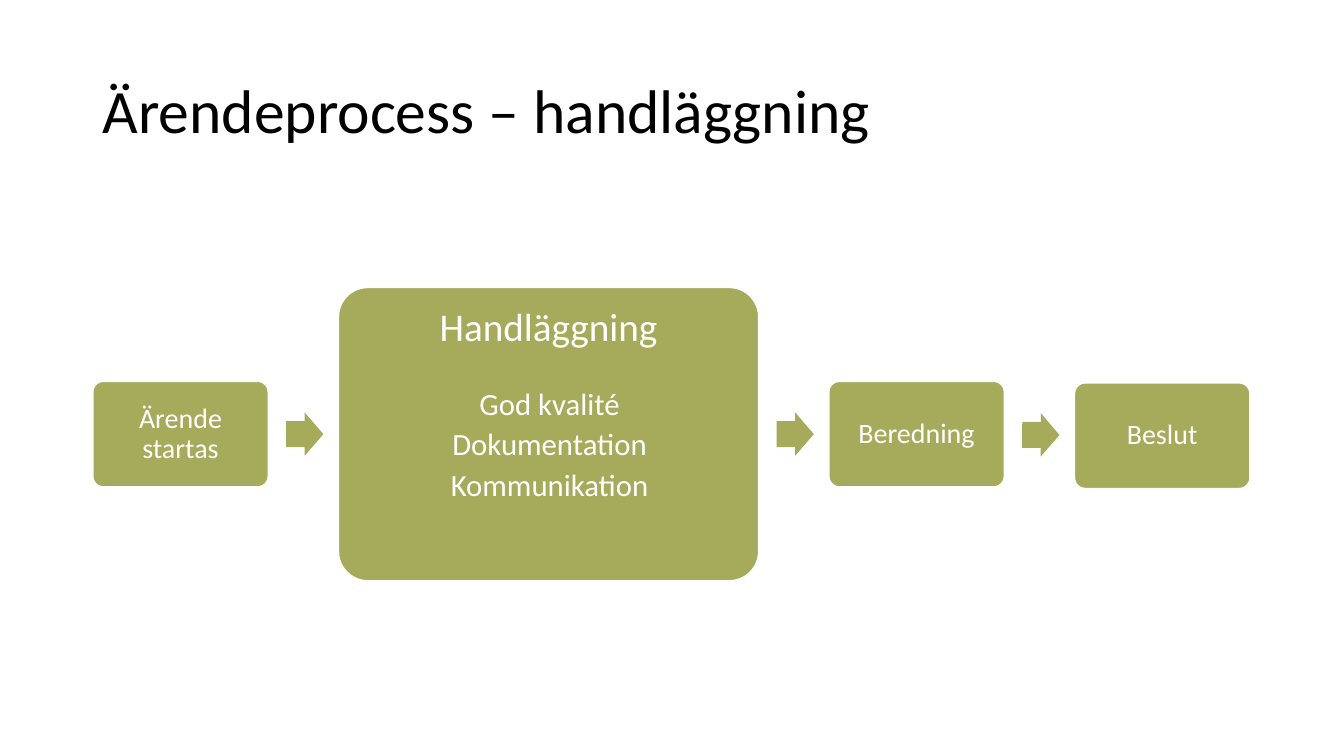
"""Build the slide on the case process, with handling as its main step."""
import dataclasses
import math

import pptx
import pptx.dml.color
import pptx.enum.shapes
import pptx.enum.text
import pptx.shapes.autoshape
import pptx.slide
import pptx.text.text
import pptx.util

Cm = pptx.util.Cm
Pt = pptx.util.Pt
Kind = pptx.enum.shapes.MSO_SHAPE
Align = pptx.enum.text.PP_ALIGN
Anchor = pptx.enum.text.MSO_ANCHOR

FONT = "Calibri"
GREEN = "A6AB5C"
WHITE = "FFFFFF"
BLACK = "000000"
GAP = 1.77
INSET = 0.45
HEAD_W, HEAD_H = 0.94, 1.09


@dataclasses.dataclass
class Step:
    """A box of the process, in centimetres and points."""
    text: str
    mid: float = 10.94
    width: float = 4.42
    height: float = 2.66
    size: int = 20
    pad: float = 0.2
    anchor: Anchor = Anchor.MIDDLE


STEPS = [
    Step("Ärende startas"),
    Step("Handläggning", width=10.59, height=7.39, size=28, pad=0.3,
         anchor=Anchor.TOP),
    Step("Beredning"),
    Step("Beslut", mid=10.98),
]
GOALS = ["God kvalité", "Dokumentation", "Kommunikation"]


def color(code: str) -> pptx.dml.color.RGBColor:
    """Turn a hex string into a colour."""
    return pptx.dml.color.RGBColor.from_string(code)


def write(frame: pptx.text.text.TextFrame, text: str, size: int, code: str,
          align: Align, anchor: Anchor, space: float) -> None:
    """Put one formatted paragraph in a text frame."""
    frame.text = text
    frame.word_wrap = True
    frame.vertical_anchor = anchor
    para = frame.paragraphs[0]
    para.alignment = align
    para.line_spacing = space
    para.font.name = FONT
    para.font.size = Pt(size)
    para.font.color.rgb = color(code)


def add(slide: pptx.slide.Slide, kind: Kind, left: float, mid: float,
        width: float, height: float) -> pptx.shapes.autoshape.Shape:
    """Add a green shape centred on a height."""
    shape = slide.shapes.add_shape(
        kind, Cm(left), Cm(mid - height / 2), Cm(width), Cm(height))
    shape.shadow.inherit = False
    shape.fill.solid()
    shape.fill.fore_color.rgb = color(GREEN)
    return shape


def draw_step(slide: pptx.slide.Slide, step: Step, left: float) -> None:
    """Draw a rounded box with its label."""
    box = add(slide, Kind.ROUNDED_RECTANGLE, left, step.mid, step.width, step.height)
    box.adjustments[0] = 0.1
    box.line.color.rgb = color(WHITE)
    box.line.width = Pt(1)
    frame = box.text_frame
    frame.margin_left = frame.margin_right = Cm(step.pad)
    frame.margin_top = frame.margin_bottom = Cm(step.pad)
    write(frame, step.text, step.size, WHITE, Align.CENTER, step.anchor, 0.9)


def draw_arrow(slide: pptx.slide.Slide, left: float, one: Step, two: Step) -> None:
    """Draw the arrow between two steps, turned towards the second."""
    arrow = add(slide, Kind.RIGHT_ARROW, left, (one.mid + two.mid) / 2, HEAD_W, HEAD_H)
    arrow.adjustments[0] = 0.6
    arrow.adjustments[1] = 0.5
    arrow.line.fill.background()
    run = (one.width + two.width) / 2 + GAP
    arrow.rotation = math.degrees(math.atan2(two.mid - one.mid, run))


def draw_goals(slide: pptx.slide.Slide) -> None:
    """List the goals of the handling step, one line each."""
    for row, goal in enumerate(GOALS):
        box = slide.shapes.add_textbox(
            Cm(8.58), Cm(9.65 + 1.02 * row), Cm(10.54), Cm(1.02))
        write(box.text_frame, goal, 22, WHITE, Align.CENTER, Anchor.MIDDLE, 1.0)


def main() -> None:
    """Build and save the slide."""
    deck = pptx.Presentation()
    deck.slide_width, deck.slide_height = Cm(33.87), Cm(19.05)
    slide = deck.slides.add_slide(deck.slide_layouts[5])

    title = slide.shapes.title
    title.left, title.top = Cm(2.33), Cm(1.01)
    title.width, title.height = Cm(29.21), Cm(3.68)
    write(title.text_frame, "Ärendeprocess – handläggning", 44, BLACK,
          Align.LEFT, Anchor.MIDDLE, 0.9)

    left = 2.34
    for step, after in zip(STEPS, STEPS[1:] + [None]):
        draw_step(slide, step, left)
        left += step.width
        if after:
            draw_arrow(slide, left + INSET, step, after)
        left += GAP
    draw_goals(slide)
    deck.save("out.pptx")


if __name__ == "__main__":
    main()
